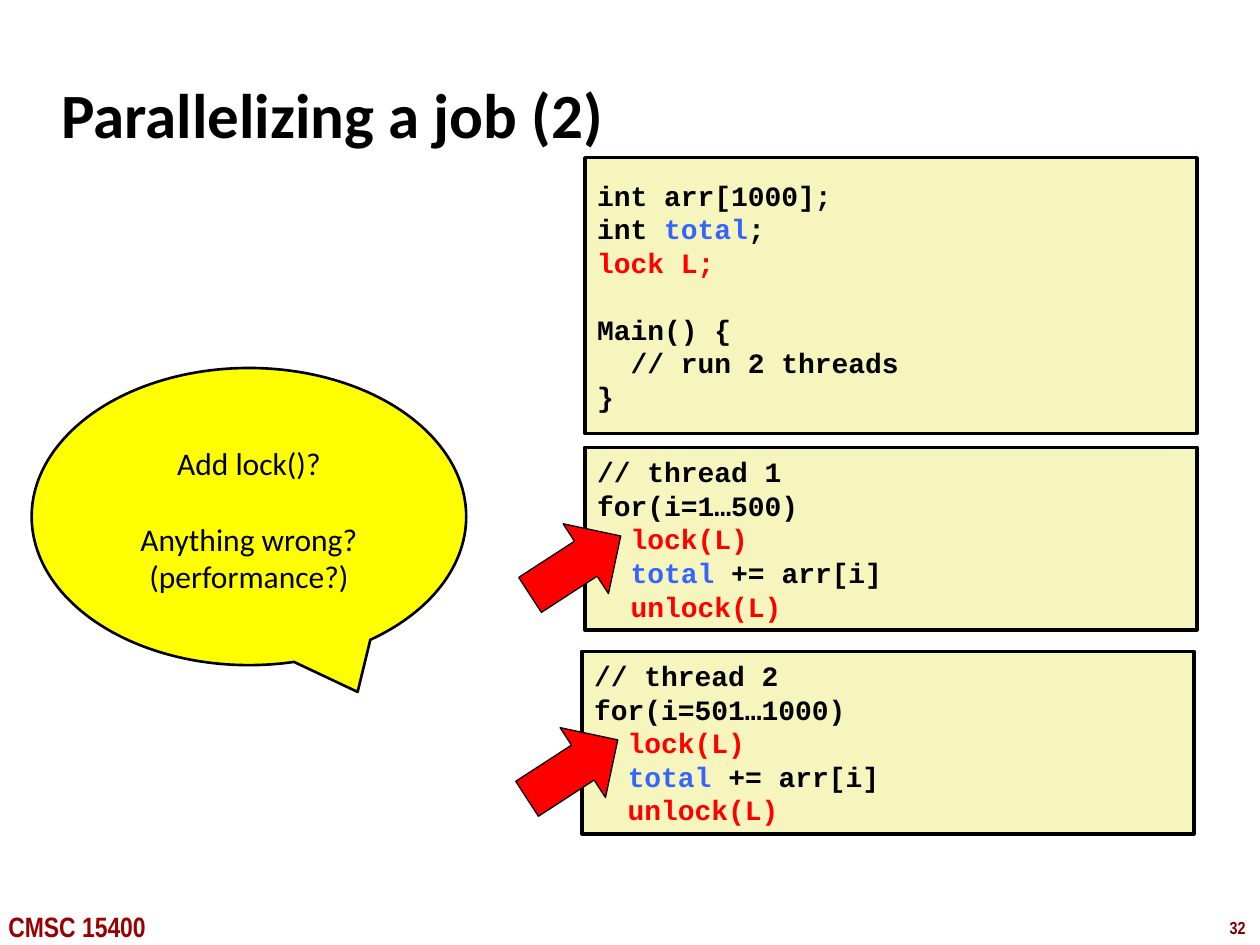
from pptx import Presentation
from pptx import util as u
from pptx.dml.color import RGBColor
from pptx.enum import shapes, text

BLACK = RGBColor(0x00, 0x00, 0x00)
RED = RGBColor(0xFF, 0x00, 0x00)
BLUE = RGBColor(0x33, 0x66, 0xFF)
CREAM = RGBColor(0xF6, 0xF5, 0xBD)
YELLOW = RGBColor(0xFF, 0xFF, 0x00)
MAROON = RGBColor(0x80, 0x00, 0x00)
CRIMSON = RGBColor(0x99, 0x00, 0x00)

presentation = Presentation()
presentation.slide_width = u.Cm(25.4)
presentation.slide_height = u.Cm(19.05)
slide = presentation.slides.add_slide(presentation.slide_layouts[6])


def add_shape(kind, left, top, width, height, fill, line_width):
    shape = slide.shapes.add_shape(kind, u.Cm(left), u.Cm(top), u.Cm(width), u.Cm(height))
    shape.shadow.inherit = False
    shape.fill.solid()
    shape.fill.fore_color.rgb = fill
    shape.line.color.rgb = BLACK
    shape.line.width = u.Pt(line_width)
    return shape


def add_lines(frame, lines, font_name, size, alignment):
    frame.word_wrap = True
    frame.vertical_anchor = text.MSO_ANCHOR.MIDDLE
    gap = 0
    paragraph = frame.paragraphs[0]
    for index, line in enumerate(lines):
        if not line:
            gap = size * 1.2
            continue
        if index:
            paragraph = frame.add_paragraph()
        paragraph.alignment = alignment
        paragraph.line_spacing = u.Pt(size * 1.2)
        paragraph.space_before = u.Pt(gap)
        gap = 0
        paragraph.font.name = font_name
        paragraph.font.size = u.Pt(size)
        paragraph.font.bold = font_name == "Courier New"
        for words, color in line:
            run = paragraph.add_run()
            run.text = words
            run.font.color.rgb = color


labels = [
    ("32", 24.54, 18.36, 0.86, 0.69, "Arial Narrow", 10, MAROON),
    ("CMSC 15400", -0.08, 18.21, 3.61, 0.94, "Arial Narrow", 16, CRIMSON),
    ("Parallelizing a job (2)", 0.99, 1.22, 21.08, 2.11, "Calibri", 36, BLACK),
]
for words, left, top, width, height, font_name, size, color in labels:
    label = slide.shapes.add_textbox(u.Cm(left), u.Cm(top), u.Cm(width), u.Cm(height))
    label.text_frame.word_wrap = False
    label.text_frame.vertical_anchor = text.MSO_ANCHOR.MIDDLE
    paragraph = label.text_frame.paragraphs[0]
    paragraph.text = words
    paragraph.font.name = font_name
    paragraph.font.size = u.Pt(size)
    paragraph.font.bold = True
    paragraph.font.color.rgb = color

main_code = [
    [("int arr[1000];", BLACK)],
    [("int ", BLACK), ("total", BLUE), (";", BLACK)],
    [("lock L;", RED)],
    [],
    [("Main() {", BLACK)],
    [("  // run 2 threads", BLACK)],
    [("}", BLACK)],
]
code_boxes = [(11.79, 3.18, 5.56, main_code)]
threads = [(1, "1…500", 11.79, 9.02), (2, "501…1000", 11.73, 13.13)]
for number, span, left, top in threads:
    thread_code = [
        [(f"// thread {number}", BLACK)],
        [(f"for(i={span})", BLACK)],
        [("  lock(L)", RED)],
        [("  ", BLACK), ("total", BLUE), (" += arr[i]", BLACK)],
        [("  unlock(L)", RED)],
    ]
    code_boxes.append((left, top, 3.68, thread_code))
for left, top, height, code in code_boxes:
    box = add_shape(shapes.MSO_SHAPE.RECTANGLE, left, top, 12.34, height, CREAM, 2)
    add_lines(box.text_frame, code, "Courier New", 16, text.PP_ALIGN.LEFT)

callout = add_shape(shapes.MSO_SHAPE.OVAL_CALLOUT, 0.64, 7.42, 8.76, 5.99, YELLOW, 1.5)
callout.adjustments[0] = 0.25
callout.adjustments[1] = 0.59
callout.text_frame.margin_bottom = 0
questions = [
    [("Add lock()?", BLACK)],
    [],
    [("Anything wrong?", BLACK)],
    [("(performance?)", BLACK)],
]
add_lines(callout.text_frame, questions, "Calibri", 18, text.PP_ALIGN.CENTER)

for number, span, left, top in threads:
    arrow = add_shape(shapes.MSO_SHAPE.RIGHT_ARROW, left - 1.28, top + 1.54, 2.18, 1.68, RED, 0.75)
    arrow.rotation = 327

presentation.save("out.pptx")
